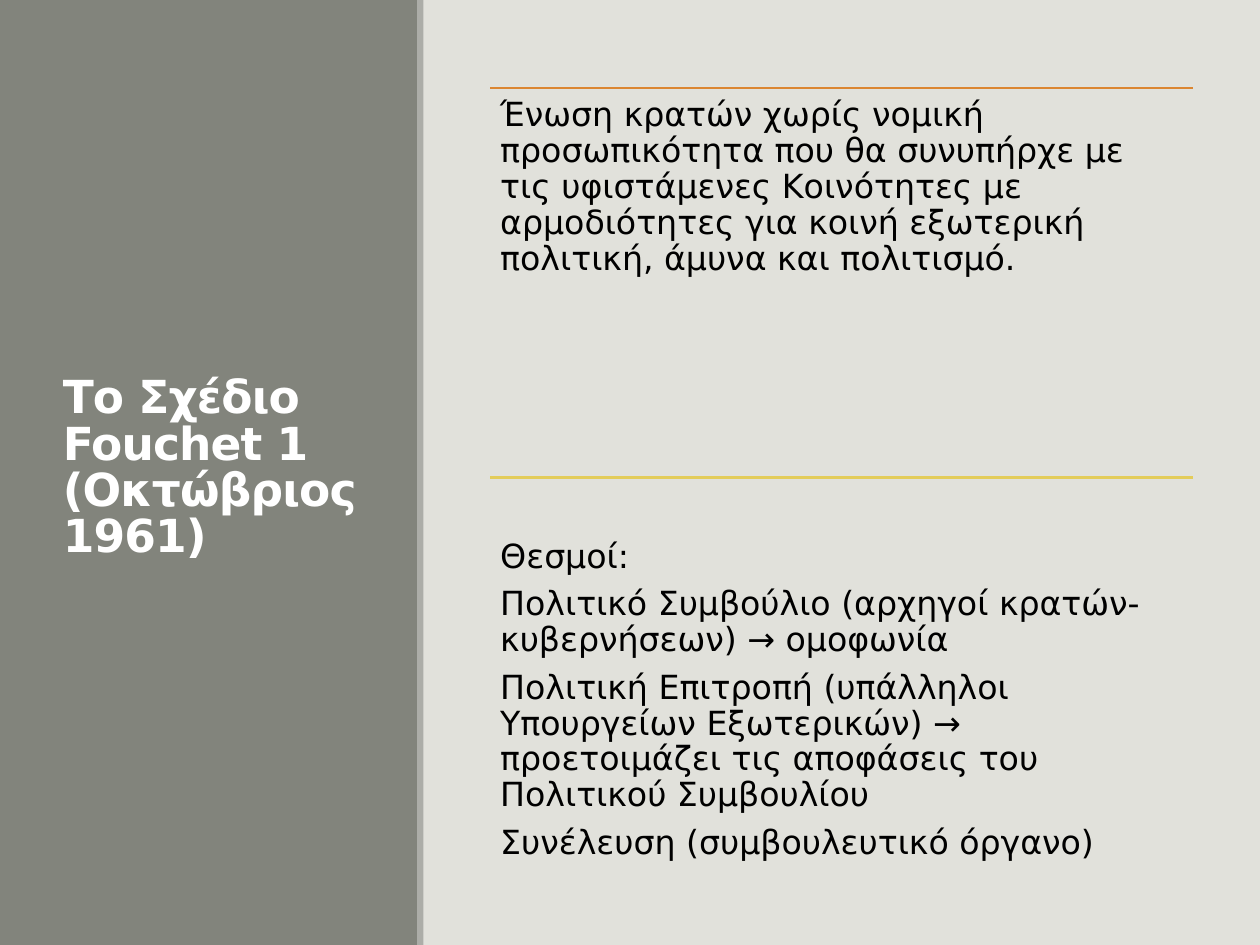
from dataclasses import dataclass

from lxml.etree import SubElement
from pptx import Presentation
from pptx.dml.color import RGBColor
from pptx.enum.shapes import MSO_CONNECTOR, MSO_SHAPE
from pptx.enum.text import MSO_ANCHOR
from pptx.oxml.ns import qn
from pptx.util import Inches, Pt


@dataclass(frozen=True)
class Theme:
    font: str = "DejaVu Sans"
    background: str = "E1E1DB"
    panel: str = "82847C"
    edge: str = "ACADA8"
    title: str = "FFFFFF"
    body: str = "000000"
    rules: tuple = ("DB8631", "E3CC5A")
    title_size: float = 26
    body_size: float = 19
    rule_width: float = 1.25


THEME = Theme()
SECTIONS = [
    ["Ένωση κρατών χωρίς νομική προσωπικότητα που θα συνυπήρχε με τις "
     "υφιστάμενες Κοινότητες με αρμοδιότητες για κοινή εξωτερική πολιτική, "
     "άμυνα και πολιτισμό."],
    ["Θεσμοί:",
     "Πολιτικό Συμβούλιο (αρχηγοί κρατών-κυβερνήσεων) → ομοφωνία",
     "Πολιτική Επιτροπή (υπάλληλοι Υπουργείων Εξωτερικών) → προετοιμάζει "
     "τις αποφάσεις του Πολιτικού Συμβουλίου",
     "Συνέλευση (συμβουλευτικό όργανο)"],
]
TOP_INSETS = [0.08, 0.49]


def add_band(slide, left, top, width, height, color):
    band = slide.shapes.add_shape(MSO_SHAPE.RECTANGLE, Inches(left), Inches(top),
                                  Inches(width), Inches(height))
    band.shadow.inherit = False
    band.fill.solid()
    band.fill.fore_color.rgb = RGBColor.from_string(color)
    band.line.fill.background()


def add_rule(slide, left, top, width, color):
    rule = slide.shapes.add_connector(MSO_CONNECTOR.STRAIGHT, Inches(left), Inches(top),
                                      Inches(left + width), Inches(top))
    rule.line.color.rgb = RGBColor.from_string(color)
    rule.line.width = Pt(THEME.rule_width)
    SubElement(rule._element.spPr, qn("a:effectLst"))


def add_text_frame(slide, left, top, width, height):
    frame = slide.shapes.add_textbox(Inches(left), Inches(top),
                                     Inches(width), Inches(height)).text_frame
    frame.word_wrap = True
    return frame


def add_run(paragraph, text, size, color, bold=False):
    run = paragraph.add_run()
    run.text = text
    run.font.name = THEME.font
    run.font.size = Pt(size)
    run.font.bold = bold
    run.font.color.rgb = RGBColor.from_string(color)
    return run


def add_title_panel(slide, left, top, width, height):
    add_band(slide, left, top, width, height, THEME.panel)
    add_band(slide, left + width - 0.01, top, 0.05, height, THEME.edge)
    frame = add_text_frame(slide, left + 0.4, top + 0.57, 2.53, 6.31)
    frame.vertical_anchor = MSO_ANCHOR.MIDDLE
    paragraph = frame.paragraphs[0]
    paragraph.line_spacing = 0.85
    run = add_run(paragraph, "Το Σχέδιο Fouchet 1 (Οκτώβριος 1961)",
                  THEME.title_size, THEME.title, bold=True)
    run.font._element.set("spc", "-50")


def add_section(slide, left, top, width, height, texts, rule_color, top_inset):
    add_rule(slide, left, top, width, rule_color)
    frame = add_text_frame(slide, left, top, width, height)
    frame.margin_left = frame.margin_right = frame.margin_bottom = Inches(0.08)
    frame.margin_top = Inches(top_inset)
    for index, text in enumerate(texts):
        paragraph = frame.add_paragraph() if index else frame.paragraphs[0]
        paragraph.line_spacing = 0.9
        paragraph.space_after = Pt(0.35 * THEME.body_size)
        add_run(paragraph, text, THEME.body_size, THEME.body)


def add_sections(slide, left, top, width, height):
    """Stack the sections in equal rows, each under its own rule."""
    row = height / len(SECTIONS)
    for index, (texts, color, inset) in enumerate(zip(SECTIONS, THEME.rules, TOP_INSETS)):
        add_section(slide, left, top + index * row, width, row, texts, color, inset)


def main():
    deck = Presentation()
    deck.slide_width, deck.slide_height = Inches(10), Inches(7.5)
    slide = deck.slides.add_slide(deck.slide_layouts[6])
    slide.background.fill.solid()
    slide.background.fill.fore_color.rgb = RGBColor.from_string(THEME.background)
    add_title_panel(slide, 0, 0, 3.32, 7.5)
    add_sections(slide, 3.89, 0.7, 5.58, 6.18)
    deck.save("out.pptx")


if __name__ == "__main__":
    main()
